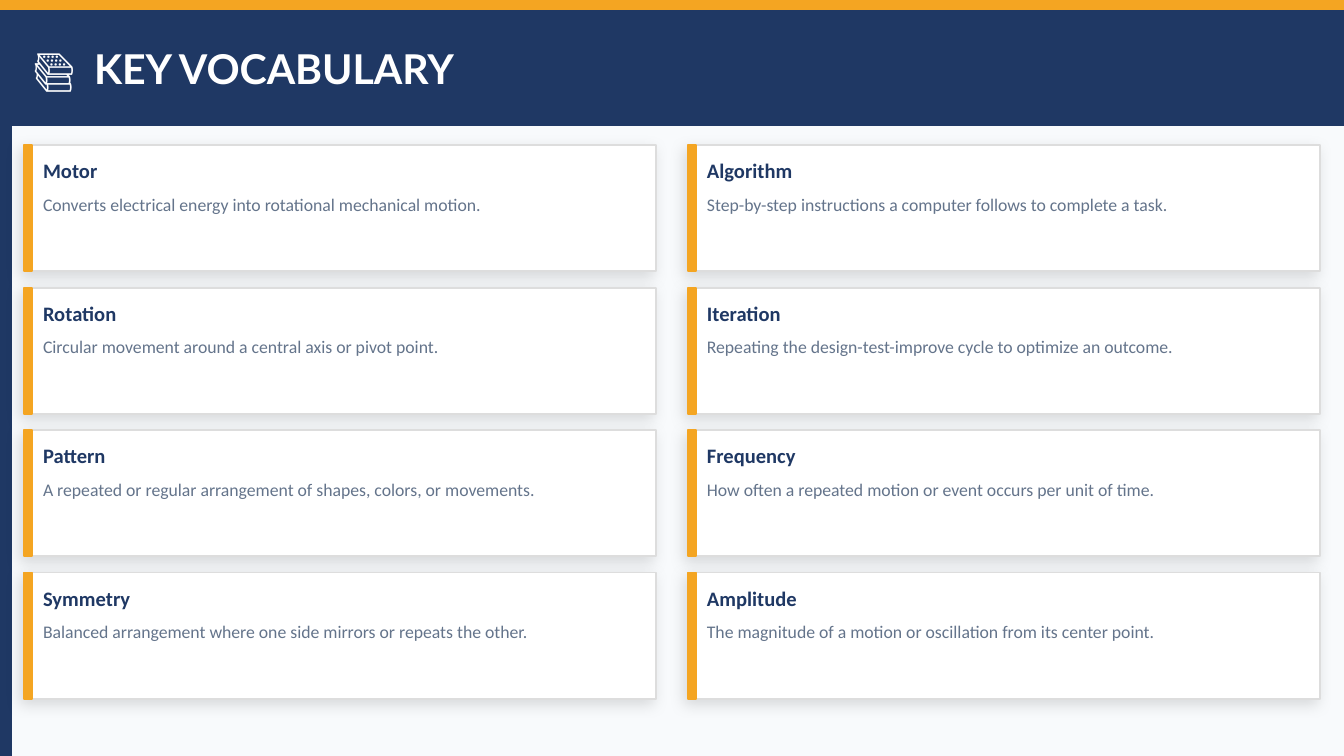
from dataclasses import dataclass

import pptx
import pptx.dml.color
import pptx.enum.shapes
import pptx.enum.text
import pptx.oxml
import pptx.oxml.ns
import pptx.util
from pptx.util import Inches


@dataclass(frozen=True)
class Theme:
    """Colours, fonts and type sizes of the deck."""

    navy: str = "1F3864"
    amber: str = "F4A522"
    white: str = "FFFFFF"
    paper: str = "F8FAFC"
    border: str = "DDDDDD"
    slate: str = "64748B"
    title_font: str = "Lato"
    body_font: str = "Calibri"
    title_size: float = 22
    term_size: float = 11
    meaning_size: float = 9.5


THEME = Theme()
ANCHOR = pptx.enum.text.MSO_ANCHOR
COLUMNS = [
    [
        ("Motor", "Converts electrical energy into rotational mechanical motion."),
        ("Rotation", "Circular movement around a central axis or pivot point."),
        ("Pattern", "A repeated or regular arrangement of shapes, colors, or movements."),
        ("Symmetry", "Balanced arrangement where one side mirrors or repeats the other."),
    ],
    [
        ("Algorithm", "Step-by-step instructions a computer follows to complete a task."),
        ("Iteration", "Repeating the design-test-improve cycle to optimize an outcome."),
        ("Frequency", "How often a repeated motion or event occurs per unit of time."),
        ("Amplitude", "The magnitude of a motion or oscillation from its center point."),
    ],
]


def rgb(code):
    """Turn a hex code into a colour."""
    return pptx.dml.color.RGBColor.from_string(code)


def write_text(box, text, *, font, size, color, bold=False, anchor=ANCHOR.TOP, tab=None):
    """Write one formatted left-aligned paragraph into a box without margins."""
    frame = box.text_frame
    frame.word_wrap = True
    frame.auto_size = pptx.enum.text.MSO_AUTO_SIZE.NONE
    frame.vertical_anchor = anchor
    frame.margin_left = frame.margin_top = frame.margin_right = frame.margin_bottom = 0
    para = frame.paragraphs[0]
    para.alignment = pptx.enum.text.PP_ALIGN.LEFT
    if tab is not None:
        para._p.get_or_add_pPr().append(pptx.oxml.parse_xml(
            f'<a:tabLst {pptx.oxml.ns.nsdecls("a")}><a:tab pos="{tab}" algn="l"/></a:tabLst>'))
    span = para.add_run()
    span.text = text
    span.font.name = font
    span.font.size = pptx.util.Pt(size)
    span.font.bold = bold
    span.font.color.rgb = rgb(color)


def add_panel(slide, left, top, width, height, fill, line=None):
    """Add a flat rectangle with a one-point outline."""
    panel = slide.shapes.add_shape(
        pptx.enum.shapes.MSO_SHAPE.RECTANGLE, left, top, width, height)
    panel.fill.solid()
    panel.fill.fore_color.rgb = rgb(fill)
    panel.line.color.rgb = rgb(line or fill)
    panel.line.width = pptx.util.Pt(1)
    panel.shadow.inherit = False
    return panel


def add_soft_shadow(panel):
    """Give a panel a faint shadow towards the lower left."""
    effects = panel._element.spPr.find(pptx.oxml.ns.qn("a:effectLst"))
    effects.append(pptx.oxml.parse_xml(
        f'<a:outerShdw {pptx.oxml.ns.nsdecls("a")} blurRad="{pptx.util.Pt(8)}" '
        f'dist="{pptx.util.Pt(3)}" dir="{135 * 60000}" algn="bl" rotWithShape="0">'
        '<a:srgbClr val="000000"><a:alpha val="12000"/></a:srgbClr></a:outerShdw>'))


def add_frame(slide, width, height, edge):
    """Add the amber top edge and the navy left edge of the page."""
    add_panel(slide, 0, 0, width, edge, THEME.amber)
    add_panel(slide, 0, edge, edge, height - edge, THEME.navy)


def add_header(slide, left, top, width, height):
    """Add the navy header band and bring the title in front of it."""
    band = add_panel(slide, left, top, width, height, THEME.navy)
    title = slide.shapes.title
    title.left, title.top = left + Inches(0.17), top
    title.width, title.height = width - Inches(0.42), height
    write_text(title, "📚\tKEY VOCABULARY", font=THEME.title_font, size=THEME.title_size,
               color=THEME.white, bold=True, anchor=ANCHOR.MIDDLE, tab=Inches(0.45))
    band._element.addnext(title._element)


def add_card(slide, left, top, width, height, term, meaning):
    """Add a vocabulary card with its accent bar, term and meaning."""
    add_soft_shadow(add_panel(slide, left, top, width, height, THEME.white, THEME.border))
    add_panel(slide, left, top, Inches(0.06), height, THEME.amber)
    text_left, text_width = left + Inches(0.14), width - Inches(0.22)
    term_box = slide.shapes.add_textbox(
        text_left, top + Inches(0.04), text_width, Inches(0.3))
    write_text(term_box, term, font=THEME.body_font, size=THEME.term_size,
               color=THEME.navy, bold=True, anchor=ANCHOR.MIDDLE)
    meaning_box = slide.shapes.add_textbox(
        text_left, top + Inches(0.36), text_width, height - Inches(0.42))
    write_text(meaning_box, meaning, font=THEME.body_font, size=THEME.meaning_size,
               color=THEME.slate)


def add_card_grid(slide, left, top, width, height):
    """Fill a box with the columns of vocabulary cards."""
    gap_x, gap_y = Inches(0.24), Inches(0.12)
    rows = len(COLUMNS[0])
    card_width = (width - gap_x * (len(COLUMNS) - 1)) // len(COLUMNS)
    card_height = (height - gap_y * (rows - 1)) // rows
    for column, cards in enumerate(COLUMNS):
        for row, (term, meaning) in enumerate(cards):
            add_card(slide, left + column * (card_width + gap_x),
                     top + row * (card_height + gap_y),
                     card_width, card_height, term, meaning)


def main():
    """Build and save the vocabulary slide."""
    deck = pptx.Presentation()
    deck.slide_width = Inches(10)
    deck.slide_height = deck.slide_width * 9 // 16
    slide = deck.slides.add_slide(deck.slide_layouts.get_by_name("Title Only"))
    slide.background.fill.solid()
    slide.background.fill.fore_color.rgb = rgb(THEME.paper)
    edge = Inches(0.08)
    add_frame(slide, deck.slide_width, deck.slide_height, edge)
    add_header(slide, edge, edge, deck.slide_width - edge, Inches(0.85))
    add_card_grid(slide, Inches(0.18), Inches(1.08), Inches(9.64), Inches(4.12))
    deck.save("out.pptx")


if __name__ == "__main__":
    main()
